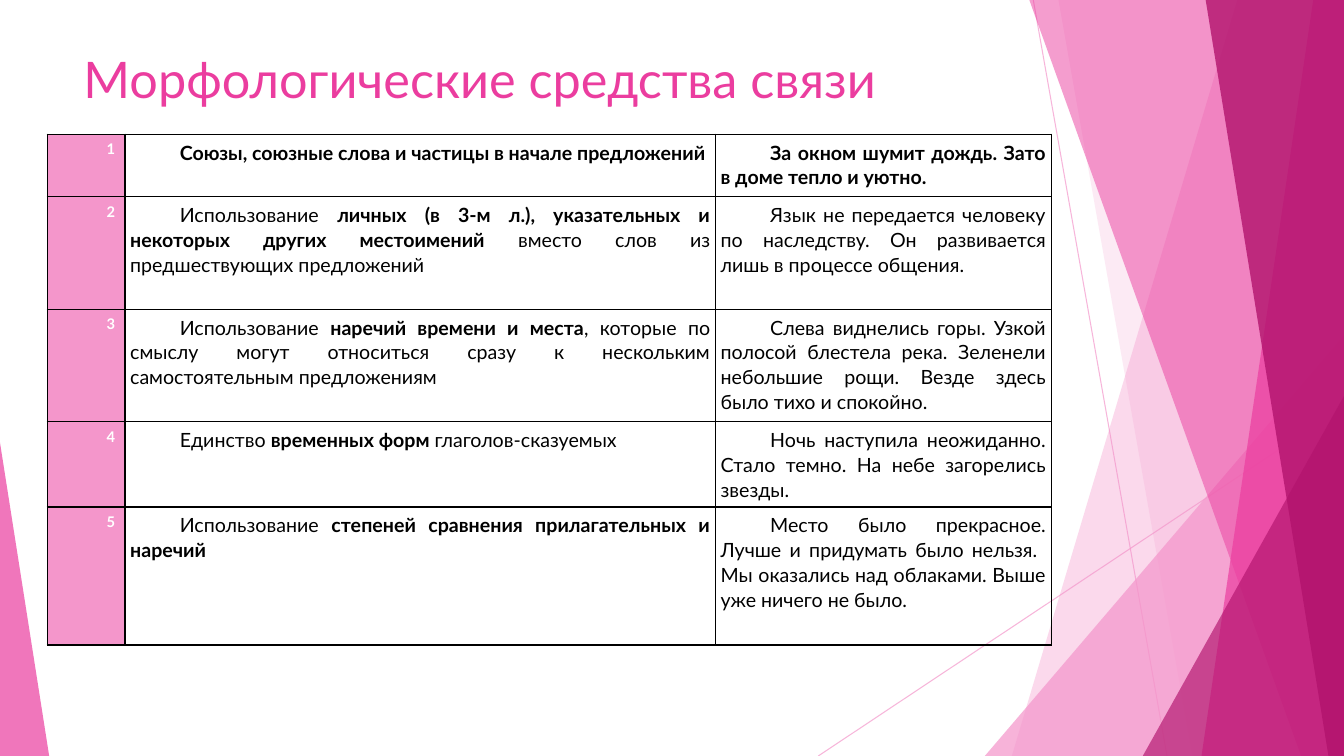
from pptx import Presentation
from pptx.dml.color import RGBColor
from pptx.enum.shapes import MSO_CONNECTOR, MSO_SHAPE
from pptx.enum.text import MSO_ANCHOR, PP_ALIGN
from pptx.oxml import parse_xml
from pptx.oxml.ns import nsdecls, qn
from pptx.util import Cm, Pt

FONT = "Lato"
LIGHT, PINK, DARK = "F496CB", "EB3D9F", "B2136D"
BLACK, WHITE = "000000", "FFFFFF"
WIDTH, HEIGHT = 33.87, 19.05

COLUMN_WIDTHS = [1.96, 14.88, 8.46]
ROW_HEIGHTS = [1.57, 2.84, 2.84, 1.57, 3.48]
ROWS = [
    ("*Союзы, союзные слова и частицы в начале предложений*",
     "*За окном шумит дождь. Зато в доме тепло и уютно.*"),
    ("Использование *личных (в 3-м л.), указательных и некоторых других местоимений*"
     " вместо слов из предшествующих предложений",
     "Язык не передается человеку по наследству. Он развивается лишь в процессе общения."),
    ("Использование *наречий времени и места*, которые по смыслу могут относиться"
     " сразу к нескольким самостоятельным предложениям",
     "Слева виднелись горы. Узкой полосой блестела река. Зеленели небольшие рощи. "
     "Везде здесь было тихо и спокойно."),
    ("Единство *временных форм *глаголов-сказуемых",
     "Ночь наступила неожиданно. Стало темно. На небе загорелись звезды."),
    ("Использование *степеней сравнения прилагательных и наречий*",
     "Место было прекрасное. Лучше и придумать было нельзя. \n"
     "Мы оказались над облаками. Выше уже ничего не было."),
]


def color(value):
    """Turn a hex string into a colour."""
    return RGBColor.from_string(value)


def set_opacity(shape, percent):
    """Make every colour of a shape partly transparent."""
    for node in shape.element.spPr.iter(qn("a:srgbClr")):
        node.append(parse_xml(f'<a:alpha {nsdecls("a")} val="{percent * 1000}"/>'))


def style_facet(shape, fill, opacity):
    """Give a facet a translucent fill without outline or shadow."""
    shape.shadow.inherit = False
    shape.fill.solid()
    shape.fill.fore_color.rgb = color(fill)
    shape.line.fill.background()
    set_opacity(shape, opacity)


def add_strip(slide, top_x, bottom_x, fill, opacity):
    """Draw a slanted strip that reaches the right edge of the slide."""
    builder = slide.shapes.build_freeform(Cm(top_x), Cm(-0.03))
    corners = [(WIDTH, -0.03), (WIDTH, HEIGHT), (bottom_x, HEIGHT)]
    builder.add_line_segments([(Cm(x), Cm(y)) for x, y in corners], close=True)
    style_facet(builder.convert_to_shape(), fill, opacity)


def add_triangle(slide, left, top, width, apex, fill, opacity):
    """Draw a triangle that stands on the bottom edge of the slide."""
    shape = slide.shapes.add_shape(
        MSO_SHAPE.ISOSCELES_TRIANGLE, Cm(left), Cm(top), Cm(width), Cm(HEIGHT - top))
    shape.adjustments[0] = apex
    style_facet(shape, fill, opacity)


def add_thin_line(slide, start, end):
    """Draw a thin translucent line."""
    line = slide.shapes.add_connector(
        MSO_CONNECTOR.STRAIGHT, *[Cm(value) for value in start + end])
    line.line.color.rgb = color(LIGHT)
    line.line.width = Pt(0.75)
    set_opacity(line, 70)
    line.element.spPr.append(parse_xml(f'<a:effectLst {nsdecls("a")}/>'))


def add_decoration(slide):
    """Draw the pink facets at both sides of the slide."""
    add_thin_line(slide, (26.04, 0), (29.41, HEIGHT))
    add_thin_line(slide, (WIDTH, 10.24), (20.62, HEIGHT))
    add_strip(slide, 31.19, 25.5, LIGHT, 36)
    add_strip(slide, 26.67, 30.05, LIGHT, 20)
    add_triangle(slide, 24.82, 8.46, 9.05, 1, LIGHT, 72)
    add_strip(slide, 25.93, 32.79, PINK, 50)
    add_strip(slide, 33.1, 30.28, PINK, 70)
    add_strip(slide, 30.38, 33.48, DARK, 80)
    add_triangle(slide, 28.8, 9.98, 5.07, 1, DARK, 66)
    add_triangle(slide, 0, 11.15, 1.24, 0, PINK, 70)


def write_text(frame, text, size=14, fill=BLACK, align=PP_ALIGN.LEFT,
               indent=0, line_spacing=1, space_after=0):
    """Write one paragraph, with bold parts between asterisks."""
    paragraph = frame.paragraphs[0]
    paragraph.alignment = align
    paragraph.line_spacing = line_spacing
    paragraph.space_before = Pt(0)
    paragraph.space_after = Pt(space_after)
    properties = paragraph._p.get_or_add_pPr()
    properties.set("marL", "0")
    properties.set("indent", str(Cm(indent)))
    for part_number, part in enumerate(text.split("*")):
        for line_number, line in enumerate(part.split("\n")):
            if line_number:
                paragraph.add_line_break()
            if line:
                run = paragraph.add_run()
                run.text = line
                run.font.name = FONT
                run.font.size = Pt(size)
                run.font.bold = part_number % 2 == 1
                run.font.color.rgb = color(fill)


def add_title(slide, text):
    """Place the title in front of the decoration."""
    title = slide.shapes.title
    title.element.getparent().append(title.element)
    title.left, title.top, title.width, title.height = Cm(1.85), Cm(1.09), Cm(23.88), Cm(2.29)
    title.text_frame.word_wrap = True
    title.text_frame.vertical_anchor = MSO_ANCHOR.TOP
    write_text(title.text_frame, text, size=36, fill=PINK)


def format_cell(cell, fill=None):
    """Set the margins, borders and fill of a cell."""
    cell.margin_left = cell.margin_right = cell.margin_top = cell.margin_bottom = Cm(0.13)
    cell.vertical_anchor = MSO_ANCHOR.TOP
    properties = cell._tc.get_or_add_tcPr()
    for side in ("lnL", "lnR", "lnT", "lnB"):
        properties.append(parse_xml(
            f'<a:{side} {nsdecls("a")} w="{Pt(1)}"><a:solidFill>'
            f'<a:srgbClr val="{BLACK}"/></a:solidFill></a:{side}>'))
    if fill:
        cell.fill.solid()
        cell.fill.fore_color.rgb = color(fill)
    else:
        cell.fill.background()


def add_means_table(slide):
    """Add the numbered table of means with examples."""
    table = slide.shapes.add_table(
        len(ROWS), len(COLUMN_WIDTHS), Cm(1.19), Cm(3.38),
        Cm(sum(COLUMN_WIDTHS)), Cm(sum(ROW_HEIGHTS))).table
    table.first_row = table.horz_banding = False
    for column, width in zip(table.columns, COLUMN_WIDTHS):
        column.width = Cm(width)
    for row, height in zip(table.rows, ROW_HEIGHTS):
        row.height = Cm(height)
    for row_number, texts in enumerate(ROWS):
        number = table.cell(row_number, 0)
        format_cell(number, fill=LIGHT)
        write_text(number.text_frame, f"*{row_number + 1}*", size=10.5, fill=WHITE,
                   align=PP_ALIGN.CENTER, indent=1.25, line_spacing=1.06,
                   space_after=8 if row_number else 0)
        for column_number, text in enumerate(texts, start=1):
            cell = table.cell(row_number, column_number)
            format_cell(cell)
            write_text(cell.text_frame, text, align=PP_ALIGN.JUSTIFY, indent=1.25,
                       line_spacing=1.06, space_after=8)


def main():
    """Build the slide and save it."""
    presentation = Presentation()
    presentation.slide_width, presentation.slide_height = Cm(WIDTH), Cm(HEIGHT)
    slide = presentation.slides.add_slide(presentation.slide_layouts[5])
    add_decoration(slide)
    add_title(slide, "Морфологические средства связи")
    add_means_table(slide)
    presentation.save("out.pptx")


if __name__ == "__main__":
    main()
